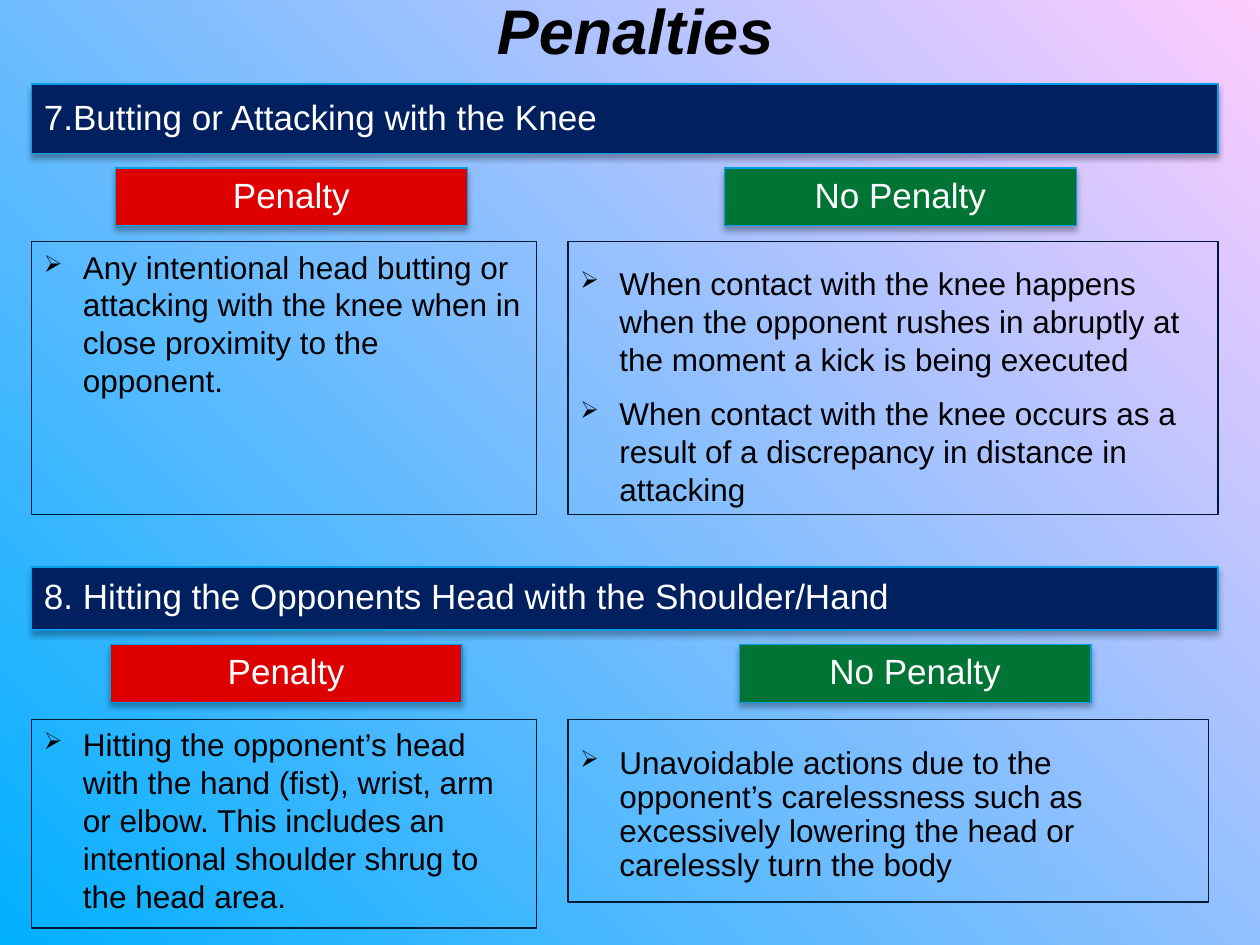
from lxml import etree
from pptx import Presentation
from pptx.dml.color import RGBColor
from pptx.enum.shapes import MSO_SHAPE
from pptx.enum.text import MSO_ANCHOR, PP_ALIGN
from pptx.oxml.ns import qn
from pptx.util import Inches, Pt

RECT = MSO_SHAPE.RECTANGLE
TOP, MIDDLE, BOTTOM = MSO_ANCHOR.TOP, MSO_ANCHOR.MIDDLE, MSO_ANCHOR.BOTTOM
LEFT, CENTER = PP_ALIGN.LEFT, PP_ALIGN.CENTER

COLS, ROWS = 120, 90
MARGIN, RIGHT_COL = 3, 54.1
BAR_W, TAG_W, TAG_H, LEFT_W = 113, 33.5, 5.5, 48.1


def rgb(color):
    return RGBColor.from_string(color)


class Deck:
    """Slide style; every position and size is in grid columns and rows."""
    font = "Arial"
    navy, red, green = "002060", "DE0000", "007434"
    edge, frame, ink, white = "019FE7", "001932", "000000", "FFFFFF"

    def __init__(self):
        self.prs = Presentation()
        self.prs.slide_width, self.prs.slide_height = Inches(10), Inches(7.5)
        self.s = self.prs.slides.add_slide(self.prs.slide_layouts[6])

    def place(self, x, y, w, h):
        cw, rh = self.prs.slide_width / COLS, self.prs.slide_height / ROWS
        return [round(v) for v in (x * cw, y * rh, w * cw, h * rh)]

    def background(self, start, end):
        fill = self.s.background.fill
        fill.gradient()
        fill.gradient_angle = 45
        for stop, color, position in zip(fill.gradient_stops, (start, end), (0, 1)):
            stop.color.rgb, stop.position = rgb(color), position

    def add_text(self, p, text, size, color, bold=False):
        r = p.add_run()
        r.text = text
        r.font.name, r.font.size = self.font, Pt(size)
        r.font.color.rgb = rgb(color)
        if bold:
            r.font.bold = r.font.italic = True

    def frame_text(self, sp, anchor, align, spacing=None):
        tf = sp.text_frame
        tf.word_wrap, tf.vertical_anchor = True, anchor
        p = tf.paragraphs[0]
        p.alignment, p.line_spacing = align, spacing
        return tf, p

    def title(self, text, *area):
        sp = self.s.shapes.add_textbox(*self.place(*area))
        _, p = self.frame_text(sp, BOTTOM, CENTER)
        self.add_text(p, text, 36, self.ink, bold=True)

    def rect(self, area, line):
        sp = self.s.shapes.add_shape(RECT, *self.place(*area))
        sp.shadow.inherit = False
        sp.line.color.rgb, sp.line.width = rgb(line), Pt(0.75)
        return sp

    def cast_shadow(self, sp):
        effects = sp._element.spPr.find(qn("a:effectLst"))
        shadow = etree.SubElement(effects, qn("a:outerShdw"), blurRad=str(Pt(3.5)),
                                  dist=str(Pt(2.2)), dir="5400000", rotWithShape="0")
        color = etree.SubElement(shadow, qn("a:srgbClr"), val="000000")
        etree.SubElement(color, qn("a:alpha"), val="32000")

    def label(self, text, fill, *area, align=CENTER):
        sp = self.rect(area, self.edge)
        sp.fill.solid()
        sp.fill.fore_color.rgb = rgb(fill)
        self.cast_shadow(sp)
        _, p = self.frame_text(sp, MIDDLE, align, 0.9)
        self.add_text(p, text, 20, self.white)

    def bullets(self, items, *area, inset=0.05, spacing=None):
        sp = self.rect(area, self.frame)
        sp.fill.background()
        tf, p = self.frame_text(sp, TOP, LEFT, spacing)
        tf.margin_top = Inches(inset)
        for i, text in enumerate(items):
            if i:
                p = tf.add_paragraph()
                p.alignment, p.line_spacing, p.space_before = LEFT, spacing, Pt(9.6)
            pPr = p._p.get_or_add_pPr()
            pPr.set("marL", str(Inches(0.31)))
            pPr.set("indent", str(-Inches(0.31)))
            etree.SubElement(pPr, qn("a:buSzPct"), val="75000")
            etree.SubElement(pPr, qn("a:buChar"), char="➢")
            self.add_text(p, text, 18, self.ink)

    def rule(self, heading, bar_y, bar_h, tag_y, penalty_x, no_penalty_x):
        self.label(heading, self.navy, MARGIN, bar_y, BAR_W, bar_h, align=LEFT)
        self.label("Penalty", self.red, penalty_x, tag_y, TAG_W, TAG_H)
        self.label("No Penalty", self.green, no_penalty_x, tag_y, TAG_W, TAG_H)


def main():
    d = Deck()
    d.background("01B0FF", "FFCCFF")
    d.title("Penalties", 2, 1, 117, 6)

    d.rule("7.Butting or Attacking with the Knee", 8, 6.6, 16, 11, 69)
    d.bullets(["Any intentional head butting or attacking with the knee when in "
               "close proximity to the opponent."], MARGIN, 23, LEFT_W, 26)
    d.bullets(["When contact with the knee happens when the opponent rushes in "
               "abruptly at the moment a kick is being executed",
               "When contact with the knee occurs as a result of a discrepancy in "
               "distance in attacking"], RIGHT_COL, 23, 61.9, 26, inset=0.18)

    d.rule("8. Hitting the Opponents Head with the Shoulder/Hand",
           54, 6, 61.4, 10.5, 70.4)
    d.bullets(["Hitting the opponent’s head with the hand (fist), wrist, arm or elbow. "
               "This includes an intentional shoulder shrug to the head area."],
              MARGIN, 68.5, LEFT_W, 19.9)
    d.bullets(["Unavoidable actions due to the opponent’s carelessness such as "
               "excessively lowering the head or carelessly turn the body"],
              RIGHT_COL, 68.5, 61, 17.4, inset=0.22, spacing=0.9)
    d.prs.save("out.pptx")


if __name__ == "__main__":
    main()
